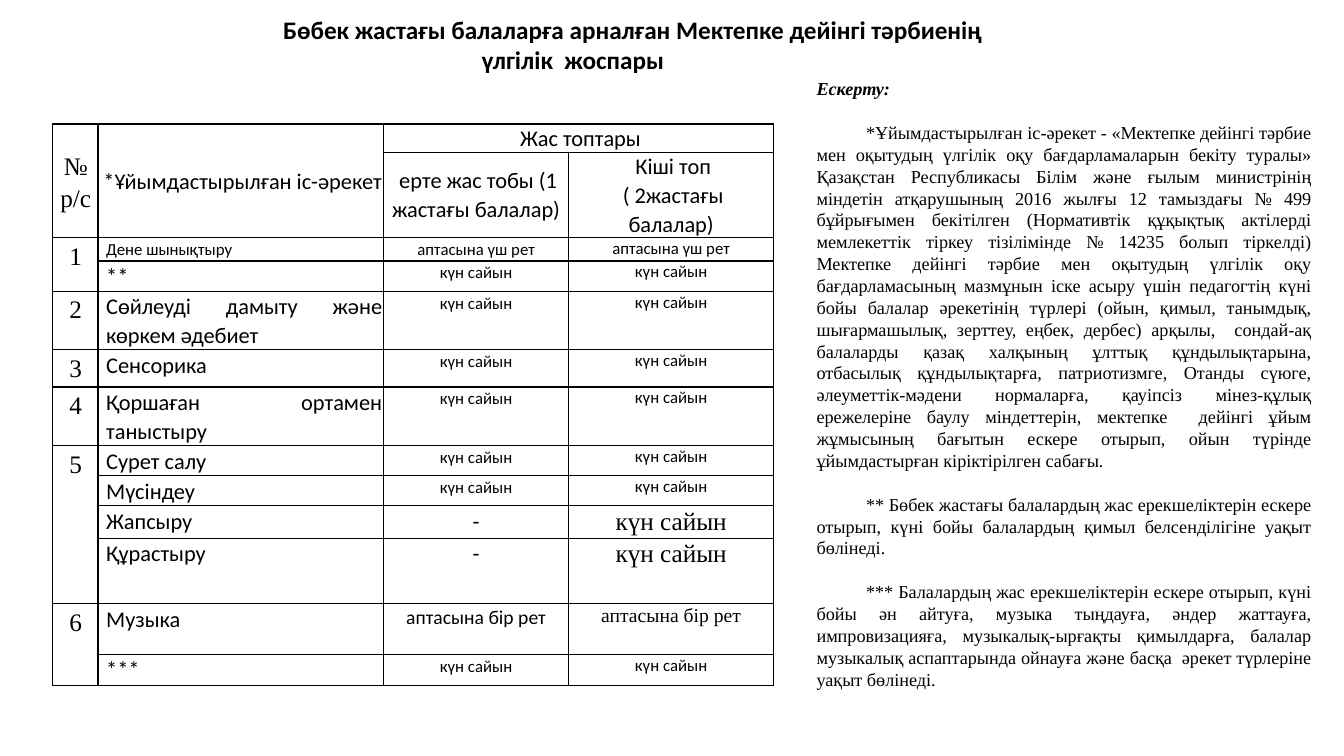
from dataclasses import dataclass

from lxml.etree import SubElement
from pptx import Presentation
from pptx.dml.color import RGBColor
from pptx.enum.text import MSO_ANCHOR, PP_ALIGN
from pptx.oxml.ns import qn
from pptx.util import Inches, Pt

WIDTH, HEIGHT = Inches(13.33), Inches(7.5)
SANS, SERIF = "Calibri", "Times New Roman"
BLACK = "000000"
DAILY = "күн сайын"


@dataclass(frozen=True)
class Style:
    size: float
    font: str = SANS
    align: PP_ALIGN = PP_ALIGN.CENTER
    spacing: float = 1.05
    left: float = 0
    first: float = 0
    before: float = 0
    after: float = 0
    bold: bool = False
    italic: bool = False


HEADING = Style(16, first=0.3)
NUMBER = Style(18, SERIF, spacing=1.15, left=0.08, after=1)
NAME = Style(16, align=PP_ALIGN.JUSTIFY, left=0.53)
SMALL_NAME = Style(12, align=PP_ALIGN.JUSTIFY, left=0.53)
SMALL, MEDIUM, DASH = Style(12), Style(14), Style(16)
LARGE_SERIF = Style(18, SERIF, spacing=1.07)
MEDIUM_SERIF = Style(14, SERIF, spacing=1.07)
TITLE = Style(18, align=PP_ALIGN.LEFT, spacing=1, bold=True)
TITLE_END = Style(18, align=PP_ALIGN.LEFT, spacing=1, left=14.78, bold=True)
NOTE_LABEL = Style(13, SERIF, PP_ALIGN.JUSTIFY, 1, bold=True, italic=True)
NOTE = Style(13, SERIF, PP_ALIGN.JUSTIFY, 1, first=3.68, before=15.6)


@dataclass(frozen=True)
class Activity:
    """One table row; number and span are given on the first row of a group."""
    height: float
    name: str
    early: str = DAILY
    junior: str = DAILY
    number: str = ""
    span: int = 1
    name_style: Style = NAME
    early_style: Style = SMALL
    junior_style: Style = SMALL


COLUMNS = (3.4, 21.23, 13.8, 15.23)
HEADER_ROWS = (3.73, 11.33)
THRICE, ONCE = "аптасына үш рет", "аптасына бір рет"
ACTIVITIES = (
    Activity(3.07, "Дене шынықтыру", THRICE, THRICE, "1", 2, SMALL_NAME),
    Activity(4, "**"),
    Activity(7.73, "Сөйлеуді дамыту және көркем әдебиет", number="2"),
    Activity(4.93, "Сенсорика", number="3"),
    Activity(7.73, "Қоршаған ортамен таныстыру", number="4"),
    Activity(4, "Сурет салу", number="5", span=4),
    Activity(4, "Мүсіндеу"),
    Activity(4.27, "Жапсыру", "-", early_style=DASH, junior_style=LARGE_SERIF),
    Activity(8.67, "Құрастыру", "-", early_style=DASH, junior_style=LARGE_SERIF),
    Activity(6.67, "Музыка", ONCE, ONCE, "6", 2,
             early_style=MEDIUM, junior_style=MEDIUM_SERIF),
    Activity(4.13, "***"),
)
ORDER = (
    "*Ұйымдастырылған іс-әрекет - «Мектепке дейінгі тәрбие мен оқытудың үлгілік оқу "
    "бағдарламаларын бекіту туралы» Қазақстан Республикасы Білім және ғылым министрінің "
    "міндетін атқарушының 2016 жылғы 12 тамыздағы № 499 бұйрығымен бекітілген "
    "(Нормативтік құқықтық актілерді мемлекеттік тіркеу тізілімінде № 14235 болып "
    "тіркелді)"
)
PURPOSE = (
    "Мектепке дейінгі тәрбие мен оқытудың үлгілік оқу бағдарламасының мазмұнын "
    "іске асыру үшін педагогтің күні бойы балалар әрекетінің түрлері (ойын, қимыл, "
    "танымдық, шығармашылық, зерттеу, еңбек, дербес) арқылы,  сондай-ақ балаларды қазақ "
    "халқының ұлттық құндылықтарына, отбасылық құндылықтарға, патриотизмге, Отанды "
    "сүюге, әлеуметтік-мәдени нормаларға, қауіпсіз мінез-құлық ережелеріне баулу "
    "міндеттерін, мектепке  дейінгі ұйым жұмысының бағытын ескере отырып, ойын түрінде "
    "ұйымдастырған кіріктірілген сабағы."
)
NOTES = (
    f"{ORDER} {PURPOSE}",
    "** Бөбек жастағы балалардың жас ерекшеліктерін ескере отырып, күні бойы балалардың "
    "қимыл белсенділігіне уақыт бөлінеді.",
    "*** Балалардың жас ерекшеліктерін ескере отырып, күні бойы ән айтуға, музыка "
    "тыңдауға, әндер жаттауға, импровизацияға, музыкалық-ырғақты қимылдарға, балалар "
    "музыкалық аспаптарында ойнауға және басқа  әрекет түрлеріне уақыт бөлінеді.",
)


def across(percent: float) -> int:
    return round(WIDTH * percent / 100)


def down(percent: float) -> int:
    return round(HEIGHT * percent / 100)


def color(value: str) -> RGBColor:
    return RGBColor.from_string(value)


def write(frame, lines: list[tuple[str, Style]]) -> None:
    for index, (text, style) in enumerate(lines):
        para = frame.paragraphs[0] if index == 0 else frame.add_paragraph()
        para.text = text
        para.alignment = style.align
        para.line_spacing = style.spacing
        para.space_before, para.space_after = Pt(style.before), Pt(style.after)
        para.font.size, para.font.name = Pt(style.size), style.font
        para.font.bold, para.font.italic = style.bold, style.italic
        para.font.color.rgb = color(BLACK)
        properties = para._p.get_or_add_pPr()
        properties.set("marL", str(across(style.left)))
        properties.set("indent", str(across(style.first)))


def add_text(page, left: float, top: float, width: float, height: float,
             lines: list[tuple[str, Style]]) -> None:
    box = page.shapes.add_textbox(across(left), down(top), across(width), down(height))
    box.text_frame.word_wrap = True
    write(box.text_frame, lines)


def outline(cell) -> None:
    properties = cell._tc.get_or_add_tcPr()
    for side in ("a:lnL", "a:lnR", "a:lnT", "a:lnB"):
        line = SubElement(properties, qn(side), w=str(Pt(1)))
        fill = SubElement(line, qn("a:solidFill"))
        SubElement(fill, qn("a:srgbClr"), val=BLACK)


def fill_cell(cell, *lines: tuple[str, Style], wide: bool = False,
              middle: bool = False) -> None:
    side, edge = (0.07, 0) if wide else (0.01, 0.01)
    cell.margin_left = cell.margin_right = Inches(side)
    cell.margin_top = cell.margin_bottom = Inches(edge)
    cell.vertical_anchor = MSO_ANCHOR.MIDDLE if middle else MSO_ANCHOR.TOP
    write(cell.text_frame, list(lines))


def add_plan(page) -> None:
    heights = HEADER_ROWS + tuple(activity.height for activity in ACTIVITIES)
    table = page.shapes.add_table(
        len(heights), len(COLUMNS), across(3.9), down(16.4),
        across(sum(COLUMNS)), down(sum(heights))).table
    table.first_row = table.horz_banding = False
    for column, width in zip(table.columns, COLUMNS):
        column.width = across(width)
    for row, height in zip(table.rows, heights):
        row.height = down(height)
    for cell in table.iter_cells():
        outline(cell)
        cell.fill.background()
        fill_cell(cell, ("", SMALL))

    for column in (0, 1):
        table.cell(0, column).merge(table.cell(1, column))
    table.cell(0, 2).merge(table.cell(0, 3))
    fill_cell(table.cell(0, 0), ("№ р/с", NUMBER), middle=True)
    fill_cell(table.cell(0, 1), ("*Ұйымдастырылған іс-әрекет", HEADING), middle=True)
    fill_cell(table.cell(0, 2), ("Жас топтары", HEADING), wide=True, middle=True)
    fill_cell(table.cell(1, 2), ("ерте жас тобы (1 жастағы балалар)", HEADING),
              wide=True, middle=True)
    fill_cell(table.cell(1, 3), ("Кіші топ", HEADING), ("( 2жастағы балалар)", HEADING),
              wide=True, middle=True)

    for row, activity in enumerate(ACTIVITIES, start=len(HEADER_ROWS)):
        if activity.number:
            number = table.cell(row, 0)
            if activity.span > 1:
                number.merge(table.cell(row + activity.span - 1, 0))
            fill_cell(number, (activity.number, NUMBER))
        fill_cell(table.cell(row, 1), (activity.name, activity.name_style))
        fill_cell(table.cell(row, 2), (activity.early, activity.early_style))
        fill_cell(table.cell(row, 3), (activity.junior, activity.junior_style), wide=True)


def main() -> None:
    deck = Presentation()
    deck.slide_width, deck.slide_height = WIDTH, HEIGHT
    page = deck.slides.add_slide(deck.slide_layouts[6])
    add_text(page, 20.33, 1.2, 57.09, 9.47, [
        ("Бөбек жастағы балаларға арналған Мектепке дейінгі тәрбиенің", TITLE),
        ("үлгілік  жоспары", TITLE_END)])
    add_plan(page)
    add_text(page, 60.02, 9.6, 38.26, 83.07,
             [("Ескерту:", NOTE_LABEL)] + [(note, NOTE) for note in NOTES])
    deck.save("out.pptx")


if __name__ == "__main__":
    main()
